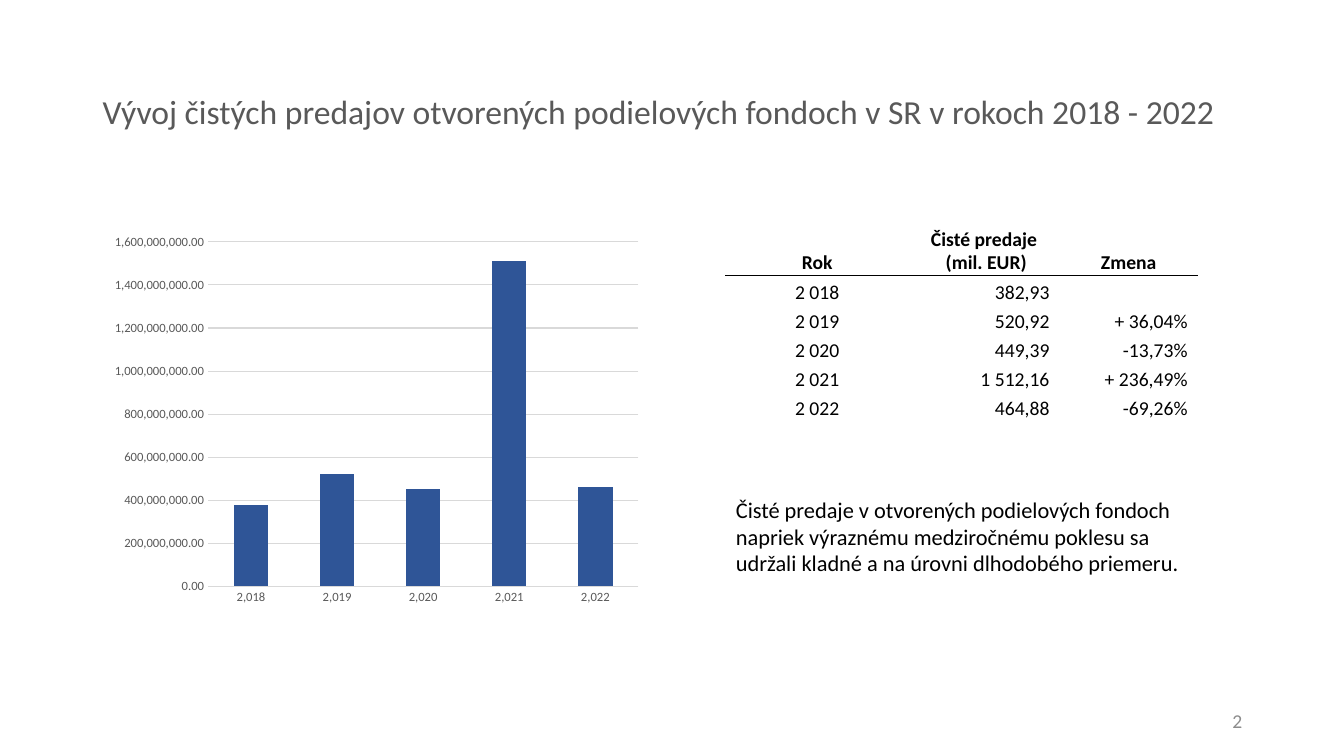
from dataclasses import dataclass

from lxml import etree
from pptx import Presentation
from pptx.chart.data import CategoryChartData
from pptx.dml.color import RGBColor
from pptx.enum.chart import XL_CHART_TYPE, XL_TICK_MARK
from pptx.enum.text import MSO_ANCHOR, PP_ALIGN
from pptx.oxml.ns import qn
from pptx.util import Inches, Pt

COLUMN = XL_CHART_TYPE.COLUMN_CLUSTERED
NO_TICK = XL_TICK_MARK.NONE
TOP, MIDDLE, BOTTOM = MSO_ANCHOR.TOP, MSO_ANCHOR.MIDDLE, MSO_ANCHOR.BOTTOM
LEFT, CENTER, RIGHT = PP_ALIGN.LEFT, PP_ALIGN.CENTER, PP_ALIGN.RIGHT


@dataclass(frozen=True)
class Theme:
    font: str = "Calibri"
    text: str = "000000"
    heading: str = "595959"
    muted: str = "8C8C8C"
    grid: str = "D9D9D9"
    bar: str = "2F5597"
    title_size: float = 24
    body_size: float = 16
    table_size: float = 14
    axis_size: float = 9


THEME = Theme()
HEADER = ("Rok", "Čisté predaje\n (mil. EUR)", "Zmena")
SALES = (
    (2018, "2 018", "382,93", ""),
    (2019, "2 019", "520,92", "+ 36,04%"),
    (2020, "2 020", "449,39", "-13,73%"),
    (2021, "2 021", "1 512,16", "+ 236,49%"),
    (2022, "2 022", "464,88", "-69,26%"),
)
CHART_VALUES = (380_000_000, 520_000_000, 450_000_000, 1_510_000_000, 460_000_000)


def style_font(font, size, color, bold=False):
    font.name = THEME.font
    font.size = Pt(size)
    font.bold = bold
    font.color.rgb = RGBColor.from_string(color)


def write_text(tf, text, size, color=THEME.text, bold=False, align=LEFT, spacing=None):
    for i, line in enumerate(text.split("\n")):
        p = tf.paragraphs[0] if i == 0 else tf.add_paragraph()
        p.alignment = align
        p.line_spacing = spacing
        if line:
            r = p.add_run()
            r.text = line
            style_font(r.font, size, color, bold)
        else:
            etree.SubElement(p._p, qn("a:endParaRPr"), sz=str(size * 100))


def add_text(slide, box, text, anchor=TOP, **fmt):
    tf = slide.shapes.add_textbox(*map(Inches, box)).text_frame
    tf.word_wrap = True
    tf.vertical_anchor = anchor
    write_text(tf, text, **fmt)


def add_border(cell, side):
    ln = etree.Element(qn(f"a:{side}"), w=str(Pt(0.5)))
    fill = etree.SubElement(ln, qn("a:solidFill"))
    etree.SubElement(fill, qn("a:srgbClr"), val=THEME.text)
    cell._tc.get_or_add_tcPr().insert(0, ln)


def add_sales_chart(slide, box):
    data = CategoryChartData(number_format="#,##0.00")
    data.categories = [row[0] for row in SALES]
    data.categories.number_format = "#,##0"
    data.add_series("Čisté predaje", CHART_VALUES)
    chart = slide.shapes.add_chart(COLUMN, *map(Inches, box), data).chart
    chart.has_legend = False
    chart.has_title = False
    style_font(chart.font, THEME.axis_size, THEME.heading)

    years, values = chart.category_axis, chart.value_axis
    for axis, number_format in ((years, "#,##0"), (values, "#,##0.00")):
        axis.major_tick_mark = axis.minor_tick_mark = NO_TICK
        axis.format.line.fill.background()
        axis.tick_labels.number_format = number_format
        axis.tick_labels.number_format_is_linked = False
        style_font(axis.tick_labels.font, THEME.axis_size, THEME.heading)
    values.minimum_scale = 0
    values.maximum_scale = 1_600_000_000
    values.major_unit = 200_000_000
    grid = values.major_gridlines.format.line
    grid.width = Pt(0.75)
    grid.color.rgb = RGBColor.from_string(THEME.grid)

    plot = chart.plots[0]
    plot.gap_width = 150
    plot.vary_by_categories = False
    fill = plot.series[0].format.fill
    fill.solid()
    fill.fore_color.rgb = RGBColor.from_string(THEME.bar)


def add_sales_table(slide, box):
    rows = [HEADER] + [row[1:] for row in SALES]
    table = slide.shapes.add_table(len(rows), len(HEADER), *map(Inches, box)).table
    table.first_row = table.horz_banding = False
    for column, width in zip(table.columns, (1.81, 1.5, 1.37)):
        column.width = Inches(width)
    for i, row in enumerate(rows):
        table.rows[i].height = Inches(0.57 if i == 0 else 0.29)
        for j, text in enumerate(row):
            cell = table.cell(i, j)
            number = i > 0 and j > 0
            cell.margin_left = cell.margin_top = cell.margin_bottom = 0
            cell.margin_right = Inches(0.1 if number else 0)
            cell.vertical_anchor = BOTTOM
            cell.fill.background()
            write_text(cell.text_frame, text, THEME.table_size, bold=i == 0,
                       align=RIGHT if number else CENTER)
            if i < 2:
                add_border(cell, "lnB" if i == 0 else "lnT")


def build_sales_slide(prs):
    slide = prs.slides.add_slide(prs.slide_layouts[6])
    add_text(slide, (0.92, 0.4, 11.94, 1.45),
             "Vývoj čistých predajov otvorených podielových fondoch v SR v rokoch 2018 - 2022",
             anchor=MIDDLE, size=THEME.title_size, color=THEME.heading, spacing=0.9)
    add_sales_chart(slide, (1.03, 2.25, 5.41, 3.83))
    add_sales_table(slide, (7.2, 2.16, 4.68, 2.02))
    add_text(slide, (7.2, 4.87, 4.89, 0.91),
             "Čisté predaje v otvorených podielových fondoch napriek výraznému "
             "medziročnému poklesu sa udržali kladné a na úrovni dlhodobého priemeru.",
             size=THEME.body_size)
    add_text(slide, (9.42, 6.95, 3, 0.4), "2", anchor=MIDDLE,
             size=THEME.table_size, color=THEME.muted, align=RIGHT)


def main():
    prs = Presentation()
    prs.slide_width, prs.slide_height = Inches(13.33), Inches(7.5)
    build_sales_slide(prs)
    prs.save("out.pptx")


if __name__ == "__main__":
    main()
